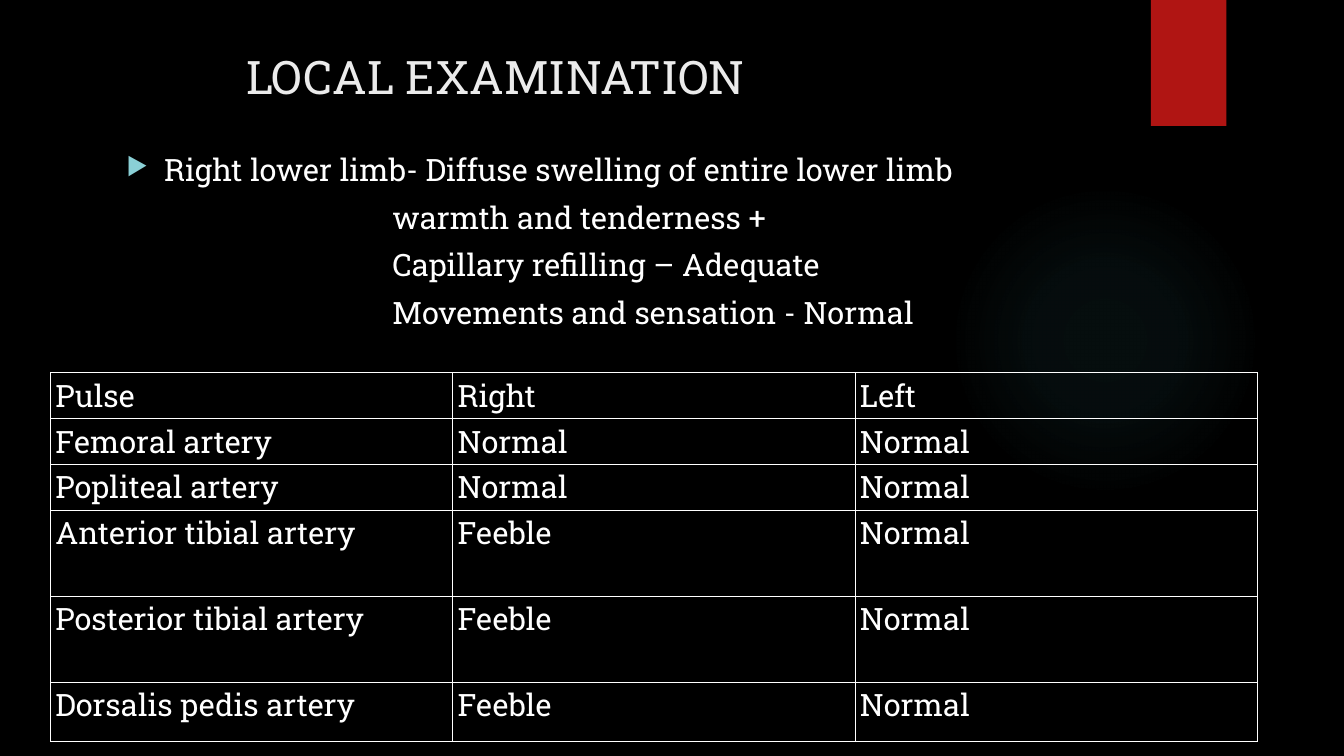
from lxml.etree import SubElement
from pptx import Presentation
from pptx.dml.color import RGBColor
from pptx.enum.shapes import MSO_SHAPE
from pptx.enum.text import MSO_ANCHOR, MSO_AUTO_SIZE, PP_ALIGN
from pptx.oxml import parse_xml
from pptx.oxml.ns import nsdecls, qn
from pptx.util import Pt

BLACK = RGBColor(0x00, 0x00, 0x00)
WHITE = RGBColor(0xFF, 0xFF, 0xFF)
TITLE_GRAY = RGBColor(0xEB, 0xEB, 0xEB)
RED = RGBColor(0xB0, 0x15, 0x13)
GLOW_TEAL = RGBColor(0x50, 0xB9, 0xC1)
BULLET_TEAL = RGBColor(0x8A, 0xD0, 0xD6)

TITLE_FORMAT = {"name": "Roboto Slab", "size": Pt(66), "bold": False}
TEXT_FORMAT = {"name": "Roboto Slab", "size": Pt(44), "bold": False}
# Position in percent, opacity in percent
GLOW_STOPS = [(0, 7), (36, 6), (69, 0)]

FINDINGS = [
    "Right lower limb- Diffuse swelling of entire lower limb",
    "warmth and tenderness +",
    "Capillary refilling – Adequate",
    "Movements and sensation - Normal",
]
PULSES = [
    ("Pulse", "Right", "Left"),
    ("Femoral artery", "Normal", "Normal"),
    ("Popliteal artery", "Normal", "Normal"),
    ("Anterior tibial artery", "Feeble", "Normal"),
    ("Posterior tibial artery", "Feeble", "Normal"),
    ("Dorsalis pedis artery", "Feeble", "Normal"),
]
ROW_HEIGHTS = [65.5, 65.5, 65.5, 123, 123, 85]
COLUMN_WIDTH = 574.6


def format_font(font, values, color):
    for name, value in values.items():
        setattr(font, name, value)
    font.color.rgb = color


def add_plain_shape(slide, kind, left, top, width, height, color):
    shape = slide.shapes.add_shape(kind, Pt(left), Pt(top), Pt(width), Pt(height))
    shape.shadow.inherit = False
    shape.line.fill.background()
    shape.fill.solid()
    shape.fill.fore_color.rgb = color
    return shape


def add_glow(slide):
    """Add a circle whose faint colour fades out from its centre."""
    glow = add_plain_shape(slide, MSO_SHAPE.OVAL, 1356, 264, 444, 444, GLOW_TEAL)
    stops = "".join(
        f'<a:gs pos="{position * 1000}"><a:srgbClr val="{GLOW_TEAL}">'
        f'<a:alpha val="{opacity * 1000}"/></a:srgbClr></a:gs>'
        for position, opacity in GLOW_STOPS
    )
    gradient = parse_xml(
        f'<a:gradFill {nsdecls("a")}><a:gsLst>{stops}</a:gsLst><a:path path="circle">'
        '<a:fillToRect l="50000" t="50000" r="50000" b="50000"/></a:path></a:gradFill>'
    )
    properties = glow.element.spPr
    properties.replace(properties.find(qn("a:solidFill")), gradient)


def set_title(slide, text):
    title = slide.shapes.title
    title.left, title.top, title.width, title.height = Pt(101.5), Pt(71.3), Pt(1481), Pt(220)
    frame = title.text_frame
    frame.text = text
    frame.auto_size = MSO_AUTO_SIZE.NONE
    frame.vertical_anchor = MSO_ANCHOR.TOP
    frame.margin_left = Pt(250)
    frame.margin_top = Pt(7.2)
    paragraph = frame.paragraphs[0]
    paragraph.alignment = PP_ALIGN.LEFT
    paragraph.line_spacing = 0.9
    format_font(paragraph.runs[0].font, TITLE_FORMAT, TITLE_GRAY)


def add_bullet(paragraph):
    properties = paragraph._p.get_or_add_pPr()
    color = SubElement(properties, qn("a:buClr"))
    SubElement(color, qn("a:srgbClr"), val=str(BULLET_TEAL))
    SubElement(properties, qn("a:buSzPct"), val="80000")
    SubElement(properties, qn("a:buChar"), char="▶")


def add_findings(slide):
    box = slide.shapes.add_textbox(Pt(173.5), Pt(213.8), Pt(1409), Pt(300))
    frame = box.text_frame
    frame.word_wrap = True
    frame.margin_top = Pt(7.2)
    for index, text in enumerate(FINDINGS):
        paragraph = frame.paragraphs[0] if index == 0 else frame.add_paragraph()
        paragraph.line_spacing = 0.91
        properties = paragraph._p.get_or_add_pPr()
        if index == 0:
            properties.set("marL", str(Pt(54)))
            properties.set("indent", str(Pt(-54)))
            add_bullet(paragraph)
        else:
            properties.set("marL", str(Pt(380)))
            paragraph.space_before = Pt(20)
        run = paragraph.add_run()
        run.text = text
        format_font(run.font, TEXT_FORMAT, WHITE)


def set_borders(cell):
    properties = cell._tc.get_or_add_tcPr()
    for index, side in enumerate(("lnL", "lnR", "lnT", "lnB")):
        line = parse_xml(
            f'<a:{side} {nsdecls("a")} w="{Pt(1)}"><a:solidFill>'
            f'<a:srgbClr val="{WHITE}"/></a:solidFill></a:{side}>'
        )
        properties.insert(index, line)


def add_pulse_table(slide):
    frame = slide.shapes.add_table(
        len(PULSES), len(PULSES[0]), Pt(72), Pt(532),
        Pt(COLUMN_WIDTH * len(PULSES[0])), Pt(sum(ROW_HEIGHTS)),
    )
    table = frame.table
    table.first_row = False
    table.horz_banding = False
    for column in table.columns:
        column.width = Pt(COLUMN_WIDTH)
    for row, height, texts in zip(table.rows, ROW_HEIGHTS, PULSES):
        row.height = Pt(height)
        for cell, text in zip(row.cells, texts):
            cell.text = text
            cell.fill.background()
            set_borders(cell)
            format_font(cell.text_frame.paragraphs[0].runs[0].font, TEXT_FORMAT, WHITE)


def main():
    presentation = Presentation()
    presentation.slide_width, presentation.slide_height = Pt(1920), Pt(1080)
    slide = presentation.slides.add_slide(presentation.slide_layouts[5])
    slide.background.fill.solid()
    slide.background.fill.fore_color.rgb = BLACK
    add_glow(slide)
    add_plain_shape(slide, MSO_SHAPE.RECTANGLE, 1644, 0, 108, 180, RED)
    set_title(slide, "LOCAL EXAMINATION")
    add_findings(slide)
    add_pulse_table(slide)
    presentation.save("out.pptx")


if __name__ == "__main__":
    main()
